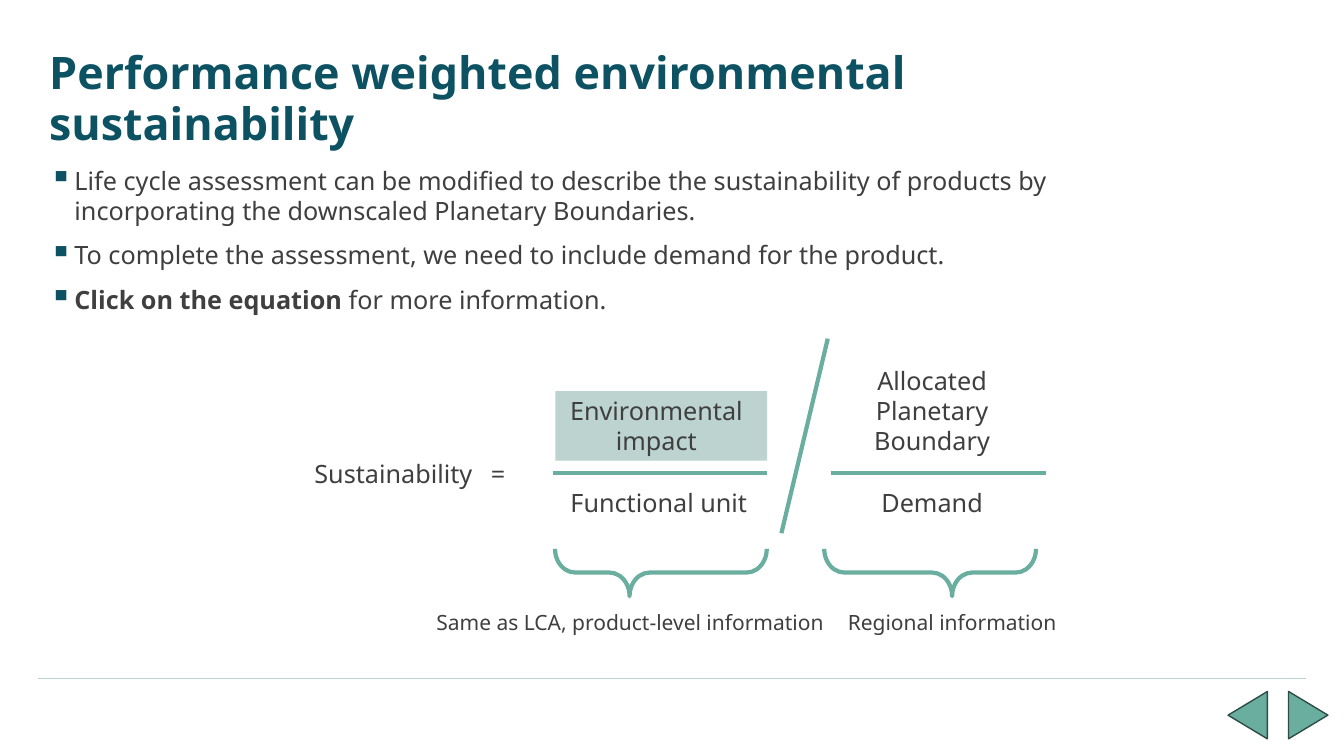
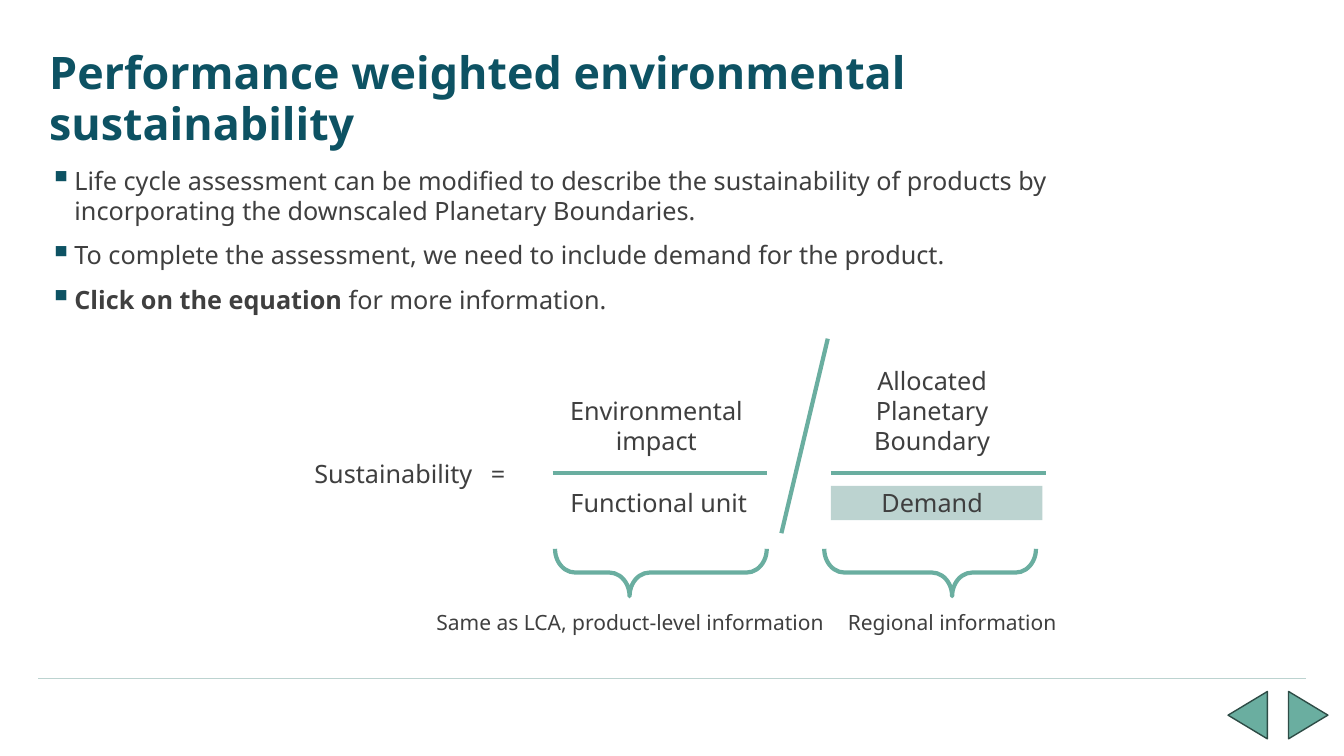
"""Build two slides that step through the sustainability equation."""
import pptx
import pptx.dml.color
import pptx.enum.shapes
import pptx.enum.text
import pptx.oxml.ns
import pptx.util
from lxml import etree

Inches = pptx.util.Inches
Pt = pptx.util.Pt
SHAPE = pptx.enum.shapes.MSO_SHAPE
ALIGN = pptx.enum.text.PP_ALIGN
ANCHOR = pptx.enum.text.MSO_ANCHOR
qn = pptx.oxml.ns.qn

FONT = "Noto Sans"
COLOURS = {
    "title": "0D5263",
    "text": "3F3F3F",
    "accent": "6AAEA0",
    "pale": "BCD3D0",
    "outline": "2E4C46",
}

TITLE = "Performance weighted environmental sustainability"
BULLETS = [
    [("Life cycle assessment can be modified to describe the sustainability of products by "
      "incorporating the downscaled Planetary Boundaries.", False)],
    [("To complete the assessment, we need to include demand for the product.", False)],
    [("Click on the equation ", True), ("for more information.", False)],
]
LABELS = [
    ("Sustainability", (3.02, 4.5, 1.8, 0.4), 18, ALIGN.LEFT),
    ("=", (4.77, 4.5, 0.4, 0.4), 18, ALIGN.LEFT),
    ("Environmental impact", (5.54, 3.87, 1.94, 0.71), 18, ALIGN.CENTER),
    ("Functional unit", (5.56, 4.79, 1.97, 0.4), 18, ALIGN.LEFT),
    ("Allocated Planetary Boundary", (8.38, 3.57, 1.73, 1.01), 18, ALIGN.CENTER),
    ("Demand", (8.38, 4.79, 1.73, 0.4), 18, ALIGN.CENTER),
    ("Same as LCA, product-level information", (4.23, 6, 4.1, 0.35), 15, ALIGN.LEFT),
    ("Regional information", (8.31, 6, 2.29, 0.35), 15, ALIGN.LEFT),
]
LINES = [
    ((0.38, 6.73), (12.95, 6.73), "pale", 1.1),
    ((5.48, 4.69), (7.61, 4.69), "accent", 3),
    ((7.75, 5.29), (8.21, 3.36), "accent", 3),
    ((8.24, 4.69), (10.37, 4.69), "accent", 3),
]
BRACES = [(6.32, 0.352), (8.99, 0.604)]
ARROWS = [(12.14, 270), (12.74, 90)]
HIGHLIGHTS = [(5.51, 3.88, 2.1, 0.69), (8.24, 4.82, 2.1, 0.34)]


def rgb(name):
    return pptx.dml.color.RGBColor.from_string(COLOURS[name])


def style_text(font, size, colour="text", bold=False):
    font.name = FONT
    font.size = Pt(size)
    font.bold = bold
    font.color.rgb = rgb(colour)


def add_box(page, place):
    box = page.shapes.add_textbox(*map(Inches, place))
    box.text_frame.word_wrap = True
    return box.text_frame


def add_title(page):
    frame = add_box(page, (0.39, 0.4, 10.6, 1.17))
    frame.vertical_anchor = ANCHOR.MIDDLE
    frame.text = TITLE
    para = frame.paragraphs[0]
    para.line_spacing = 0.95
    style_text(para.runs[0].font, 32, "title", True)


def add_bullet(para):
    props = para._p.get_or_add_pPr()
    props.set("marL", str(Inches(0.25)))
    props.set("indent", str(-Inches(0.25)))
    colour = etree.SubElement(props, qn("a:buClr"))
    etree.SubElement(colour, qn("a:srgbClr"), val=COLOURS["title"])
    etree.SubElement(props, qn("a:buSzPct"), val="125000")
    etree.SubElement(props, qn("a:buChar"), char="▪")


def add_body(page):
    frame = add_box(page, (0.39, 1.59, 10.61, 1.61))
    for index, parts in enumerate(BULLETS):
        para = frame.add_paragraph() if index else frame.paragraphs[0]
        add_bullet(para)
        para.space_before = Pt(10 if index else 0)
        for text, bold in parts:
            span = para.add_run()
            span.text = text
            style_text(span.font, 18, bold=bold)


def add_label(page, text, place, size, align):
    frame = add_box(page, place)
    frame.text = text
    para = frame.paragraphs[0]
    para.alignment = align
    style_text(para.runs[0].font, size)


def add_line(page, start, end, colour, width):
    line = page.shapes.add_connector(
        pptx.enum.shapes.MSO_CONNECTOR.STRAIGHT, *map(Inches, start + end))
    line.line.color.rgb = rgb(colour)
    line.line.width = Pt(width)
    etree.SubElement(line._element.spPr, qn("a:effectLst"))


def add_figure(page, kind, place, fill=None, line=None, width=1, rotation=0):
    figure = page.shapes.add_shape(kind, *map(Inches, place))
    figure.shadow.inherit = False
    figure.rotation = rotation
    if fill:
        figure.fill.solid()
        figure.fill.fore_color.rgb = rgb(fill)
    else:
        figure.fill.background()
    if line:
        figure.line.color.rgb = rgb(line)
        figure.line.width = Pt(width)
    else:
        figure.line.fill.background()
    return figure


def add_slide(deck, highlight):
    page = deck.slides.add_slide(deck.slide_layouts[6])
    add_title(page)
    add_body(page)
    add_figure(page, SHAPE.RECTANGLE, highlight, fill="pale")
    for line in LINES:
        add_line(page, *line)
    for left, tip in BRACES:
        brace = add_figure(page, SHAPE.LEFT_BRACE, (left, 4.63, 0.47, 2.1),
                           line="accent", width=3, rotation=270)
        brace.adjustments[0] = 0.425
        brace.adjustments[1] = tip
    for label in LABELS:
        add_label(page, *label)
    for left, rotation in ARROWS:
        add_figure(page, SHAPE.ISOSCELES_TRIANGLE, (left, 6.9, 0.47, 0.39),
                   fill="accent", line="outline", rotation=rotation)


def main():
    deck = pptx.Presentation()
    deck.slide_width = Inches(13.33)
    deck.slide_height = Inches(7.5)
    for highlight in HIGHLIGHTS:
        add_slide(deck, highlight)
    deck.save("out.pptx")


if __name__ == "__main__":
    main()
